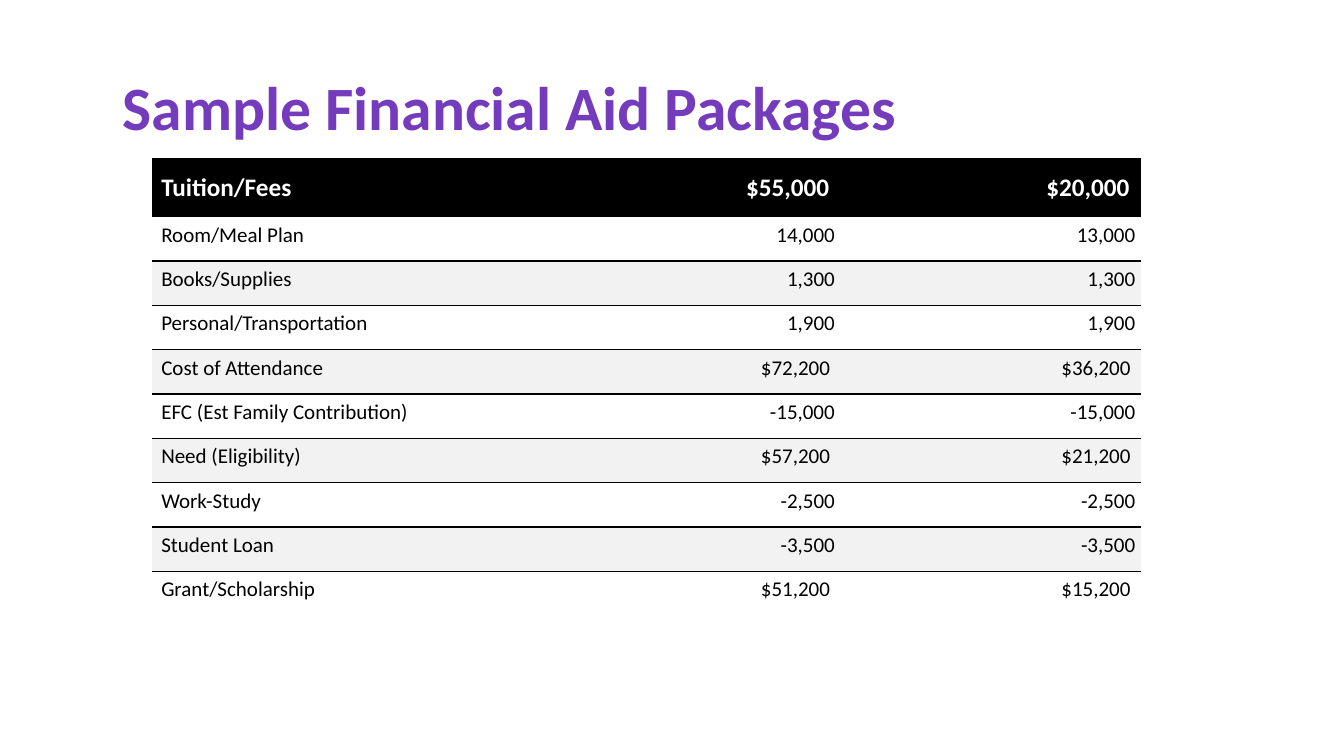
"""Build the slide that compares sample financial aid packages."""
from dataclasses import dataclass

import lxml.etree
import pptx
import pptx.dml.color
import pptx.enum.text
import pptx.oxml.ns
import pptx.util

Inches = pptx.util.Inches
Pt = pptx.util.Pt
Align = pptx.enum.text.PP_ALIGN
Anchor = pptx.enum.text.MSO_ANCHOR
qn = pptx.oxml.ns.qn


@dataclass(frozen=True)
class Theme:
    font: str = "Calibri"
    purple: str = "753BBD"
    black: str = "000000"
    white: str = "FFFFFF"
    band: str = "F2F2F2"
    title_size: int = 44
    header_size: int = 18
    body_size: int = 15
    rule_width: int = 1
    plain_table_style: str = "{2D5ABB26-0587-4C30-8999-92F81FD0307C}"


THEME = Theme()
COLUMN_WIDTHS = (4.8, 2.03, 0.95, 2.03)
HEADER_HEIGHT = 0.58
ROW_HEIGHT = 0.44
PACKAGES = (
    ("Tuition/Fees", "$55,000 ", "$20,000 "),
    ("Room/Meal Plan", "14,000", "13,000"),
    ("Books/Supplies", "1,300", "1,300"),
    ("Personal/Transportation", "1,900", "1,900"),
    ("Cost of Attendance", "$72,200 ", "$36,200 "),
    ("EFC (Est Family Contribution)", "-15,000", "-15,000"),
    ("Need (Eligibility)", "$57,200 ", "$21,200 "),
    ("Work-Study", "-2,500", "-2,500"),
    ("Student Loan", "-3,500", "-3,500"),
    ("Grant/Scholarship", "$51,200 ", "$15,200 "),
)


def rgb(color):
    return pptx.dml.color.RGBColor.from_string(color)


def write(paragraph, text, size, color, bold):
    paragraph.text = text
    for run in paragraph.runs:
        run.font.name = THEME.font
        run.font.size = Pt(size)
        run.font.bold = bold
        run.font.color.rgb = rgb(color)


def add_title(slide, text):
    title = slide.shapes.add_textbox(Inches(1.12), Inches(0.37), Inches(11.5), Inches(1.45))
    frame = title.text_frame
    frame.word_wrap = True
    frame.vertical_anchor = Anchor.MIDDLE
    heading = frame.paragraphs[0]
    write(heading, text, THEME.title_size, THEME.purple, True)
    heading.line_spacing = 0.9


def add_rule(cell, side):
    properties = cell._tc.get_or_add_tcPr()
    rule = lxml.etree.Element(qn(f"a:{side}"), w=str(Pt(THEME.rule_width)))
    fill = lxml.etree.SubElement(rule, qn("a:solidFill"))
    lxml.etree.SubElement(fill, qn("a:srgbClr"), val=THEME.black)
    properties.insert(0, rule)


def fill_cell(cell, color):
    if color:
        cell.fill.solid()
        cell.fill.fore_color.rgb = rgb(color)
    else:
        cell.fill.background()


def write_cell(cell, text, is_header, is_amount):
    cell.margin_left, cell.margin_right = Inches(0.09), Inches(0.06)
    cell.margin_top, cell.margin_bottom = Inches(0.13 if is_header else 0.02), Inches(0.13)
    cell.vertical_anchor = Anchor.MIDDLE if is_header else Anchor.BOTTOM
    entry = cell.text_frame.paragraphs[0]
    if is_header:
        write(entry, text, THEME.header_size, THEME.white, True)
    else:
        write(entry, text, THEME.body_size, THEME.black, False)
    entry.alignment = Align.RIGHT if is_amount else Align.LEFT


def add_package_table(slide, packages):
    height = HEADER_HEIGHT + ROW_HEIGHT * (len(packages) - 1)
    table = slide.shapes.add_table(
        len(packages), len(COLUMN_WIDTHS), Inches(1.51), Inches(1.57),
        Inches(sum(COLUMN_WIDTHS)), Inches(height)).table
    table.first_row = table.horz_banding = False
    table._tbl.tblPr.find(qn("a:tableStyleId")).text = THEME.plain_table_style
    for column, width in zip(table.columns, COLUMN_WIDTHS):
        column.width = Inches(width)

    last = len(packages) - 1
    for index, (item, first, second) in enumerate(packages):
        is_header = index == 0
        is_band = index % 2 == 0
        table.rows[index].height = Inches(HEADER_HEIGHT if is_header else ROW_HEIGHT)
        row_color = THEME.black if is_header else THEME.band if is_band else None
        for column, text in enumerate((item, first, "", second)):
            cell = table.cell(index, column)
            fill_cell(cell, row_color)
            if text:
                write_cell(cell, text, is_header, column > 0)
            if 0 < index < last:
                add_rule(cell, "lnT" if is_band else "lnB")


def main():
    deck = pptx.Presentation()
    deck.slide_width, deck.slide_height = Inches(13.33), Inches(7.5)
    slide = deck.slides.add_slide(deck.slide_layouts[6])
    add_title(slide, "Sample Financial Aid Packages")
    add_package_table(slide, PACKAGES)
    deck.save("out.pptx")


if __name__ == "__main__":
    main()
